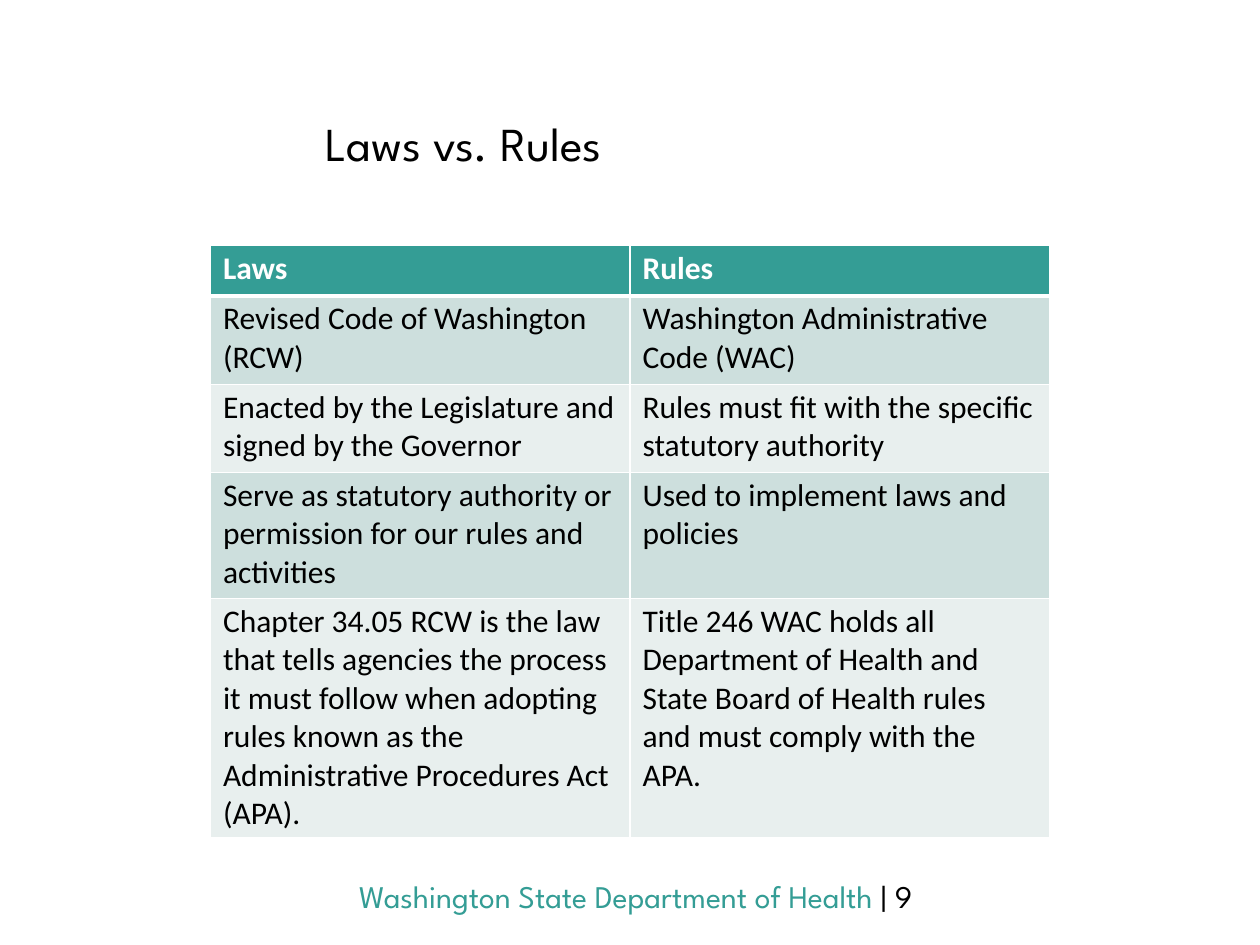
from lxml.etree import SubElement
from pptx import Presentation
from pptx.dml.color import RGBColor
from pptx.enum.text import MSO_ANCHOR, MSO_AUTO_SIZE, PP_ALIGN
from pptx.oxml.ns import qn
from pptx.util import Inches, Pt

TEAL = RGBColor(0x34, 0x9D, 0x95)
MIST = RGBColor(0xCD, 0xDF, 0xDD)
PALE = RGBColor(0xE8, 0xEF, 0xEE)
WHITE = RGBColor(0xFF, 0xFF, 0xFF)
BLACK = RGBColor(0, 0, 0)
HEAD = "League Spartan"
BODY = "Calibri"

ROWS = [
    ("Laws", "Rules"),
    ("Revised Code of Washington (RCW)", "Washington Administrative Code (WAC)"),
    ("Enacted by the Legislature and\nsigned by the Governor",
     "Rules must fit with the specific\nstatutory authority"),
    ("Serve as statutory authority or permission for our rules and activities",
     "Used to implement laws and policies"),
    ("Chapter 34.05 RCW is the law that tells agencies the process it must follow "
     "when adopting rules known as the Administrative Procedures Act (APA).",
     "Title 246 WAC holds all Department of Health and State Board of Health "
     "rules and must comply with the APA."),
]
HEIGHTS = [0.4, 0.7, 0.7, 1, 1.9]


def add_run(para, text, size, font, color, bold=False):
    """Append one styled run to a paragraph."""
    run = para.add_run()
    run.text = text
    run.font.size, run.font.name, run.font.bold = Pt(size), font, bold
    run.font.color.rgb = color


def indent(para, left, before):
    """Set the left indent and the space before a paragraph."""
    props = para._p.get_or_add_pPr()
    props.set("marL", str(Inches(left)))
    props.set("indent", "0")
    para.space_before = Pt(before)


def set_frame(frame, top):
    """Set margins, wrapping and anchor of a text frame."""
    frame.margin_left = frame.margin_right = frame.margin_bottom = 0
    frame.margin_top = Inches(top)
    frame.word_wrap = True
    frame.auto_size = MSO_AUTO_SIZE.NONE
    frame.vertical_anchor = MSO_ANCHOR.MIDDLE


def add_title(slide):
    """Fill the title placeholder."""
    title = slide.shapes.title
    title.left, title.top = Inches(0.69), Inches(0.4)
    title.width, title.height = Inches(8.62), Inches(1.45)
    set_frame(title.text_frame, 0.01)
    para = title.text_frame.paragraphs[0]
    para.alignment = PP_ALIGN.LEFT
    indent(para, 1.89, 1)
    add_run(para, "Laws vs. ", 27, HEAD, BLACK)
    add_run(para, "Rules", 27, HEAD, BLACK)


def add_foot(slide):
    """Add the agency name and the page number."""
    box = slide.shapes.add_textbox(Inches(2.23), Inches(6.94), Inches(5.55), Inches(0.32))
    set_frame(box.text_frame, 0.02)
    para = box.text_frame.paragraphs[0]
    para.alignment = PP_ALIGN.CENTER
    indent(para, 0.08, 1.1)
    add_run(para, "Washington State Department of Health ", 18, HEAD, TEAL)
    add_run(para, "| ", 18, HEAD, BLACK)
    add_run(para, "9", 18, HEAD, BLACK)


def add_edge(cell, side, width):
    """Draw one white border of a cell."""
    line = SubElement(cell._tc.get_or_add_tcPr(), qn(f"a:ln{side}"), w=str(Pt(width)))
    fill = SubElement(line, qn("a:solidFill"))
    SubElement(fill, qn("a:srgbClr"), val=str(WHITE))


def fill_cell(cell, text, row):
    """Style a cell by its row and write its paragraphs."""
    cell.margin_left = cell.margin_right = cell.margin_bottom = 0
    cell.margin_top = Inches(0.03)
    for side, thick in (("L", False), ("R", False), ("T", row == 1), ("B", row == 0)):
        add_edge(cell, side, 3 if thick else 1)
    cell.fill.solid()
    cell.fill.fore_color.rgb = TEAL if row == 0 else MIST if row % 2 else PALE
    frame = cell.text_frame
    for num, part in enumerate(text.split("\n")):
        para = frame.add_paragraph() if num else frame.paragraphs[0]
        indent(para, 0.1, 0 if num else 2.5)
        add_run(para, part, 18, BODY, BLACK if row else WHITE, row == 0)


def add_grid(slide):
    """Add the table that compares laws with rules."""
    frame = slide.shapes.add_table(len(ROWS), 2, Inches(1.67), Inches(1.95),
                                   Inches(6.66), Inches(sum(HEIGHTS)))
    table = frame.table
    for row, (texts, height) in enumerate(zip(ROWS, HEIGHTS)):
        table.rows[row].height = Inches(height)
        for col, text in enumerate(texts):
            fill_cell(table.cell(row, col), text, row)
    table.cell(len(ROWS) - 1, 1).margin_right = Inches(0.3)


def main():
    """Build and save the slide."""
    deck = Presentation()
    deck.slide_width, deck.slide_height = Inches(10), Inches(7.5)
    slide = deck.slides.add_slide(deck.slide_layouts[5])
    add_title(slide)
    add_foot(slide)
    add_grid(slide)
    deck.save("out.pptx")


if __name__ == "__main__":
    main()
